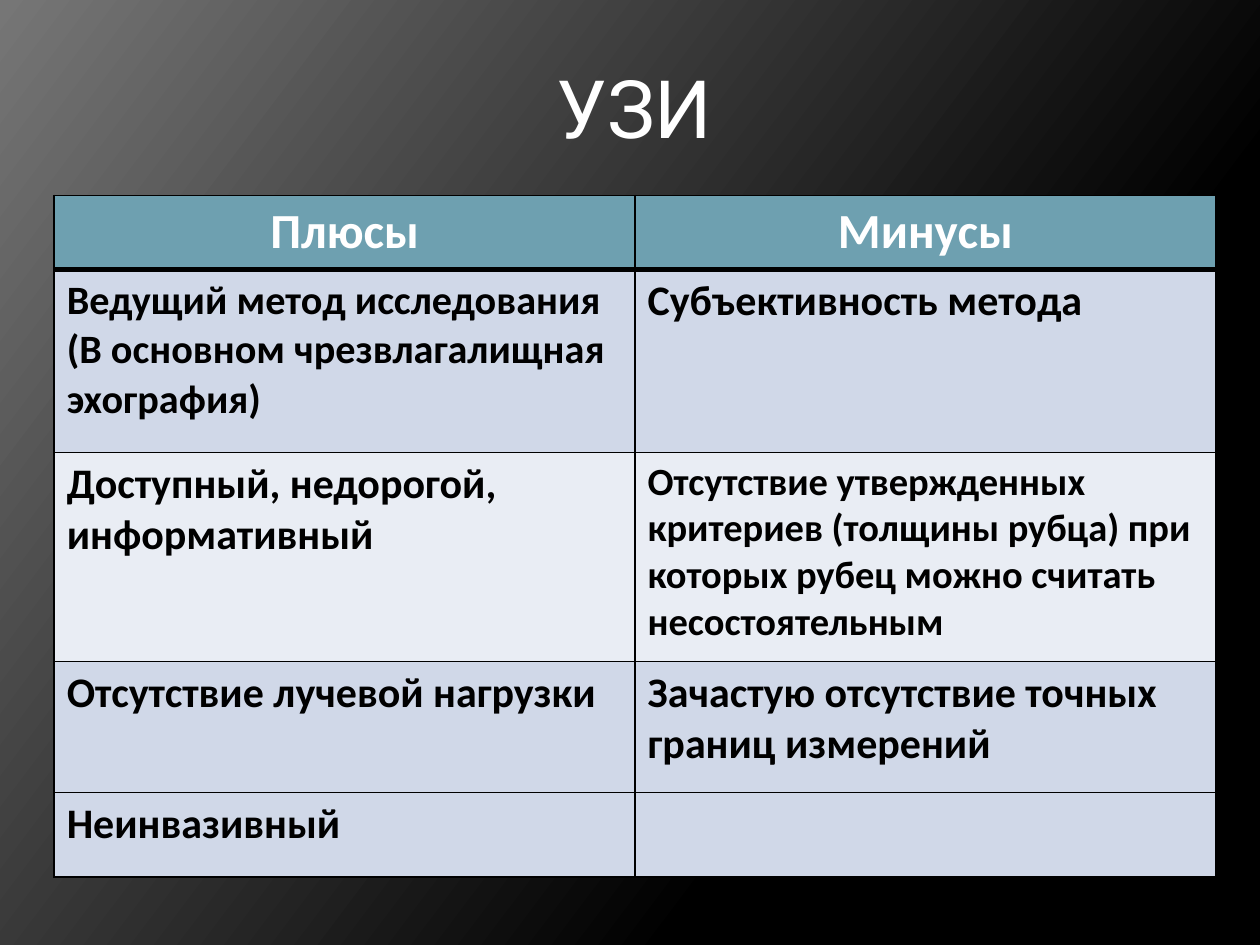
from pptx import Presentation
from pptx.dml.color import RGBColor
from pptx.enum.text import MSO_ANCHOR, PP_ALIGN
from pptx.oxml.ns import qn
from pptx.util import Inches, Pt
from lxml import etree

CENTER, LEFT = PP_ALIGN.CENTER, PP_ALIGN.LEFT
MIDDLE = MSO_ANCHOR.MIDDLE
BLACK = RGBColor(0x00, 0x00, 0x00)
GRAY = RGBColor(0x76, 0x76, 0x76)
WHITE = RGBColor(0xFF, 0xFF, 0xFF)
TEAL = RGBColor(0x6E, 0xA0, 0xB0)
BAND_DARK = RGBColor(0xD0, 0xD8, 0xE8)
BAND_LIGHT = RGBColor(0xE9, 0xED, 0xF4)

HEADERS = ["Плюсы", "Минусы"]
ROWS = [
    (1.45, BAND_DARK, [
        ("Ведущий метод исследования\n(В основном чрезвлагалищная эхография)", 23),
        ("Субъективность метода", 24)]),
    (1.66, BAND_LIGHT, [
        ("Доступный, недорогой, информативный", 24),
        ("Отсутствие утвержденных критериев (толщины рубца) "
         "при которых рубец можно считать несостоятельным", 22)]),
    (1.04, BAND_DARK, [
        ("Отсутствие лучевой нагрузки", 24),
        ("Зачастую отсутствие точных границ измерений", 24)]),
    (0.67, BAND_DARK, [("Неинвазивный", 24), ("", 24)]),
]


def paint_background(page):
    """Fill the page with a diagonal gradient from black to gray."""
    fill = page.background.fill
    fill.gradient()
    fill.gradient_angle = 143
    for stop, position, color in zip(fill.gradient_stops, (0.3, 1), (BLACK, GRAY)):
        stop.position = position
        stop.color.rgb = color


def style_paragraphs(frame, name, size, color, align, bold=False):
    """Give every paragraph of a text frame one look."""
    for para in frame.paragraphs:
        para.alignment = align
        para.font.name = name
        para.font.size = Pt(size)
        para.font.bold = bold
        para.font.color.rgb = color


def add_title(page, text):
    """Add the centred page title."""
    box = page.shapes.add_textbox(Inches(0.5), Inches(0.3), Inches(9.07), Inches(1.09))
    frame = box.text_frame
    frame.word_wrap = True
    frame.vertical_anchor = MIDDLE
    frame.text = text
    style_paragraphs(frame, "Roboto", 46, WHITE, CENTER)


def set_borders(cell, top=1, bottom=1):
    """Draw black lines around a cell, with widths in points."""
    properties = cell._tc.get_or_add_tcPr()
    for side, width in (("L", 1), ("R", 1), ("T", top), ("B", bottom)):
        line = etree.SubElement(properties, qn(f"a:ln{side}"), w=str(Pt(width)))
        solid = etree.SubElement(line, qn("a:solidFill"))
        etree.SubElement(solid, qn("a:srgbClr"), val=str(BLACK))


def fill_cell(cell, text, size, color, background, align=LEFT, **borders):
    """Set the text, borders and fill of a cell."""
    cell.text = text
    style_paragraphs(cell.text_frame, "Calibri", size, color, align, bold=True)
    set_borders(cell, **borders)
    cell.fill.solid()
    cell.fill.fore_color.rgb = background


def add_comparison(page):
    """Add the table of advantages and drawbacks."""
    table = page.shapes.add_table(
        len(ROWS) + 1, len(HEADERS),
        Inches(0.43), Inches(1.55), Inches(9.22), Inches(5.41)).table
    table.rows[0].height = Inches(0.59)
    for column, header in enumerate(HEADERS):
        fill_cell(table.cell(0, column), header, 28, WHITE, TEAL, CENTER, bottom=3)
    for row, (height, background, entries) in enumerate(ROWS, start=1):
        table.rows[row].height = Inches(height)
        for column, (text, size) in enumerate(entries):
            fill_cell(table.cell(row, column), text, size, BLACK, background,
                      top=3 if row == 1 else 1)


def main():
    """Build and save the deck."""
    deck = Presentation()
    deck.slide_width, deck.slide_height = Inches(10), Inches(7.5)
    page = deck.slides.add_slide(deck.slide_layouts[6])
    paint_background(page)
    add_title(page, "УЗИ")
    add_comparison(page)
    deck.save("out.pptx")


if __name__ == "__main__":
    main()
